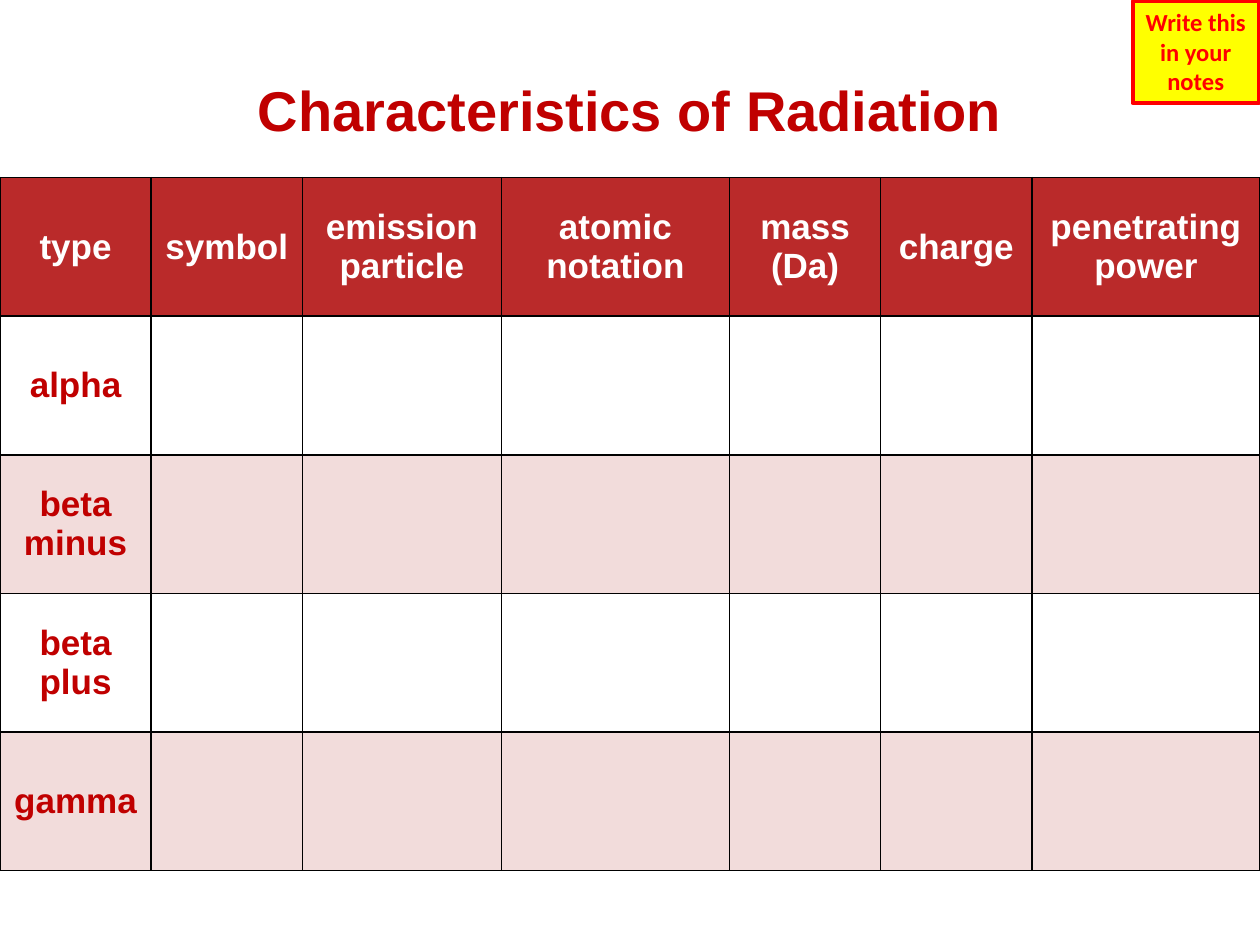
from lxml import etree
from pptx import Presentation
from pptx.dml.color import RGBColor
from pptx.enum.shapes import MSO_SHAPE
from pptx.enum.text import MSO_ANCHOR, MSO_AUTO_SIZE, PP_ALIGN
from pptx.oxml.ns import qn
from pptx.util import Inches, Pt

RECTANGLE = MSO_SHAPE.RECTANGLE
TOP, MIDDLE = MSO_ANCHOR.TOP, MSO_ANCHOR.MIDDLE
FIT_SHAPE = MSO_AUTO_SIZE.SHAPE_TO_FIT_TEXT
CENTER = PP_ALIGN.CENTER

BLACK = RGBColor(0x00, 0x00, 0x00)
WHITE = RGBColor(0xFF, 0xFF, 0xFF)
DARK_RED = RGBColor(0xC0, 0x00, 0x00)
HEADER_RED = RGBColor(0xBA, 0x2A, 0x2A)
BAND_PINK = RGBColor(0xF2, 0xDC, 0xDB)
YELLOW = RGBColor(0xFF, 0xFF, 0x00)
RED = RGBColor(0xFF, 0x00, 0x00)

TITLE = "Characteristics of Radiation"
HEADINGS = ["type", "symbol", "emission\nparticle", "atomic\nnotation",
            "mass\n(Da)", "charge", "penetrating power"]
RADIATION_TYPES = ["alpha", "beta\nminus", "beta\nplus", "gamma"]
COLUMN_WIDTHS = [1.2, 1.2, 1.58, 1.81, 1.2, 1.2, 1.81]
TITLE_HEIGHT = 0.82


def write(frame, text, font_name, size, color):
    """Put centred bold text into a frame, one paragraph a line."""
    frame.text = text
    for paragraph in frame.paragraphs:
        paragraph.alignment = CENTER
        paragraph.font.name = font_name
        paragraph.font.size = Pt(size)
        paragraph.font.bold = True
        paragraph.font.color.rgb = color


def set_borders(cell, **side_colors):
    """Draw one-point borders on the named sides of a cell."""
    properties = cell._tc.get_or_add_tcPr()
    for position, (side, color) in enumerate(side_colors.items()):
        border = etree.Element(qn(f"a:ln{side}"), w=str(Pt(1)))
        fill = etree.SubElement(border, qn("a:solidFill"))
        etree.SubElement(fill, qn("a:srgbClr"), val=str(color))
        properties.insert(position, border)


def style_cell(cell, text, size, color, fill, anchor, edge):
    """Set the text, fill and borders of a cell."""
    write(cell.text_frame, text, "Arial", size, color)
    cell.vertical_anchor = anchor
    if fill is None:
        cell.fill.background()
    else:
        cell.fill.solid()
        cell.fill.fore_color.rgb = fill
    set_borders(cell, L=edge, R=edge, T=edge, B=BLACK)


def add_radiation_table(slide, left, top, width, height):
    """Add the titled table with one row for each type of radiation."""
    columns = len(HEADINGS)
    body = [[name] + [""] * (columns - 1) for name in RADIATION_TYPES]
    rows = [[TITLE] + [""] * (columns - 1), HEADINGS] + body
    table = slide.shapes.add_table(len(rows), columns, left, top, width, height).table
    table.first_row = table.horz_banding = False
    for column, column_width in zip(table.columns, COLUMN_WIDTHS):
        column.width = Inches(column_width)
    title_height = Inches(TITLE_HEIGHT)
    row_height = (height - title_height) // (len(rows) - 1)
    for index, texts in enumerate(rows):
        table.rows[index].height = row_height if index else title_height
        if index == 0:
            style = (32, DARK_RED, None, TOP, WHITE)
        elif index == 1:
            style = (20, WHITE, HEADER_RED, MIDDLE, BLACK)
        else:
            band = BAND_PINK if index % 2 else None
            style = (20, DARK_RED, band, MIDDLE, BLACK)
        for column, text in enumerate(texts):
            style_cell(table.cell(index, column), text, *style)
    table.cell(0, 0).merge(table.cell(0, columns - 1))


def add_reminder(slide, left, top, width, height):
    """Add the yellow reminder to take notes."""
    reminder = slide.shapes.add_shape(RECTANGLE, left, top, width, height)
    reminder.shadow.inherit = False
    reminder.fill.solid()
    reminder.fill.fore_color.rgb = YELLOW
    reminder.line.color.rgb = RED
    reminder.line.width = Pt(2.25)
    frame = reminder.text_frame
    frame.word_wrap = True
    frame.auto_size = FIT_SHAPE
    frame.vertical_anchor = TOP
    write(frame, "Write this in your notes", "Calibri", 14, RED)


def main():
    """Build and save the slide."""
    presentation = Presentation()
    presentation.slide_width, presentation.slide_height = Inches(10), Inches(7.5)
    slide = presentation.slides.add_slide(presentation.slide_layouts[6])
    add_radiation_table(slide, Inches(0), Inches(0.59), Inches(10), Inches(6.32))
    add_reminder(slide, Inches(8.99), Inches(0.01), Inches(1), Inches(0.81))
    presentation.save("out.pptx")


if __name__ == "__main__":
    main()
